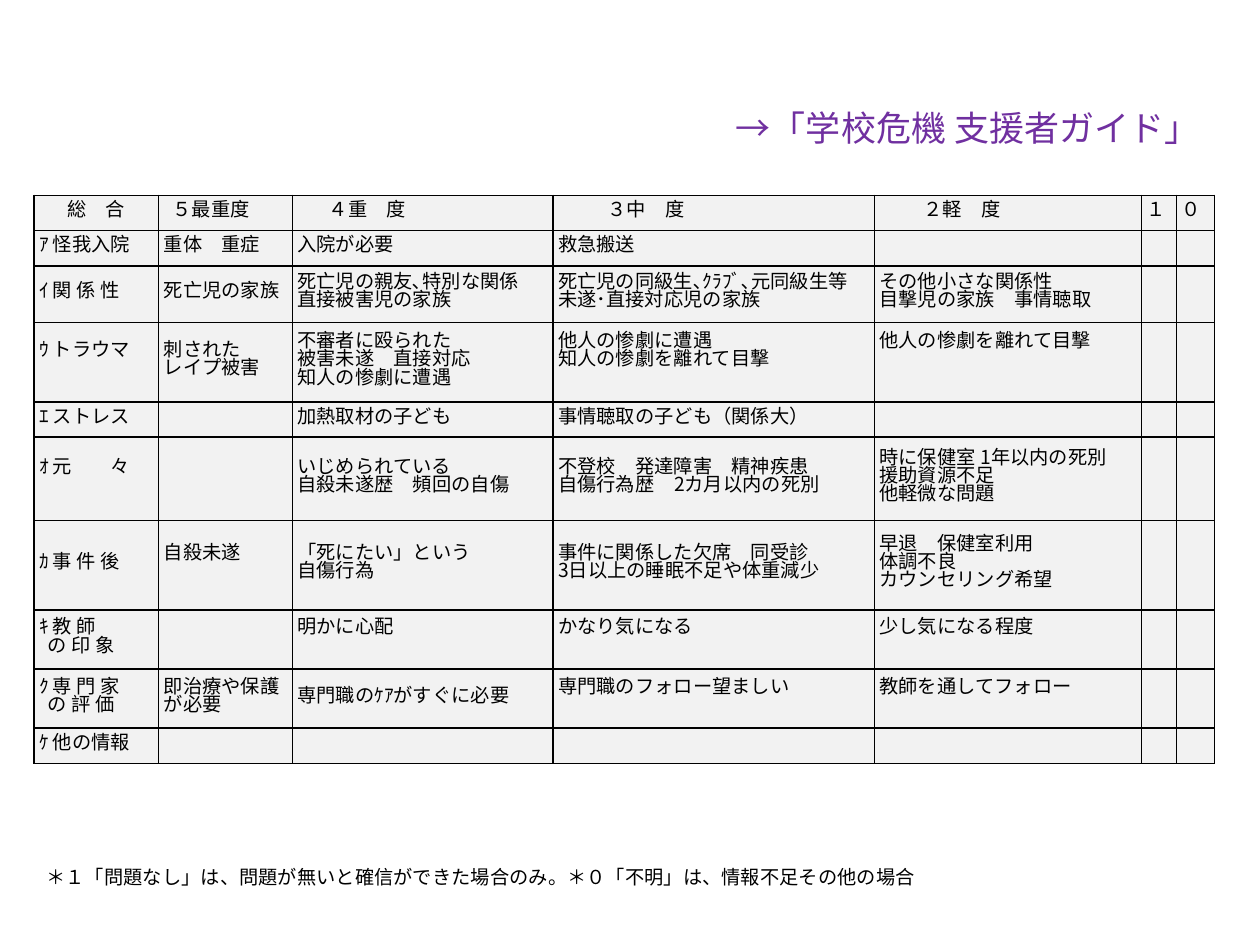
from dataclasses import dataclass

from lxml import etree
from pptx import Presentation
from pptx.dml.color import RGBColor
from pptx.enum.text import MSO_ANCHOR, MSO_AUTO_SIZE, PP_ALIGN
from pptx.oxml.ns import qn
from pptx.util import Inches, Pt

LEFT, CENTER, RIGHT = PP_ALIGN.LEFT, PP_ALIGN.CENTER, PP_ALIGN.RIGHT
MIDDLE = MSO_ANCHOR.MIDDLE
FIT_SHAPE = MSO_AUTO_SIZE.SHAPE_TO_FIT_TEXT

BLACK = RGBColor(0x00, 0x00, 0x00)
PURPLE = RGBColor(0x70, 0x30, 0xA0)
LIGHT_GREY = RGBColor(0xF2, 0xF2, 0xF2)

FONT = "Noto Sans CJK JP"
BODY_SIZE = 11
LINE_HEIGHT = 10.4
CONTINUATION_INDENT = 0.07
COLUMN_WIDTHS = (0.99, 1.06, 2.07, 2.55, 2.12, 0.28, 0.3)
ROW_HEIGHTS = (0.28, 0.28, 0.45, 0.63, 0.28, 0.66, 0.71, 0.47, 0.47, 0.28)


@dataclass(frozen=True)
class Entry:
    text: str = ""
    lines_below: int = 0  # free lines kept under the text
    indent: float = 0
    align: PP_ALIGN = LEFT


@dataclass(frozen=True)
class Caption:
    text: str
    left: float
    top: float
    width: float
    height: float
    size: int
    color: RGBColor
    align: PP_ALIGN


# Criteria by severity; columns left out at the end of a row are empty
ROWS = (
    (Entry("総　合", align=CENTER), Entry("５最重度", indent=0.07),
     Entry("４重　度", indent=0.25), Entry("３中　度", indent=0.39),
     Entry("２軽　度", indent=0.35), Entry("１"), Entry("０")),
    (Entry("ｱ 怪我入院"), Entry("重体　重症"), Entry("入院が必要"), Entry("救急搬送")),
    (Entry("ｲ 関 係 性"), Entry("死亡児の家族"),
     Entry("死亡児の親友､特別な関係\n直接被害児の家族"),
     Entry("死亡児の同級生､ｸﾗﾌﾞ､元同級生等\n未遂･直接対応児の家族"),
     Entry("その他小さな関係性\n目撃児の家族　事情聴取")),
    (Entry("ｳ トラウマ", 1), Entry("刺された\nレイプ被害"),
     Entry("不審者に殴られた\n被害未遂　直接対応\n知人の惨劇に遭遇"),
     Entry("他人の惨劇に遭遇\n知人の惨劇を離れて目撃", 1),
     Entry("他人の惨劇を離れて目撃", 2)),
    (Entry("ｴ ストレス"), Entry(), Entry("加熱取材の子ども"),
     Entry("事情聴取の子ども（関係大）")),
    (Entry("ｵ 元　　々", 1), Entry(),
     Entry("いじめられている\n自殺未遂歴　頻回の自傷"),
     Entry("不登校　発達障害　精神疾患\n自傷行為歴　2カ月以内の死別"),
     Entry("時に保健室 1年以内の死別\n援助資源不足\n他軽微な問題")),
    (Entry("ｶ 事 件 後"), Entry("自殺未遂", 1),
     Entry("「死にたい」という\n自傷行為"),
     Entry("事件に関係した欠席　同受診\n3日以上の睡眠不足や体重減少"),
     Entry("早退　保健室利用\n体調不良\nカウンセリング希望")),
    (Entry("ｷ 教 師\nの 印 象"), Entry(), Entry("明かに心配", 1),
     Entry("かなり気になる", 1), Entry("少し気になる程度", 1)),
    (Entry("ｸ 専 門 家\nの 評 価"), Entry("即治療や保護が必要"),
     Entry("専門職のｹｱがすぐに必要"), Entry("専門職のフォロー望ましい", 1),
     Entry("教師を通してフォロー", 1)),
    (Entry("ｹ 他の情報"),),
)

CAPTIONS = (
    Caption("＊１「問題なし」は、問題が無いと確信ができた場合のみ。＊０「不明」は、情報不足その他の場合",
            0.27, 6.82, 9.45, 0.29, BODY_SIZE, BLACK, LEFT),
    Caption("→「学校危機 支援者ガイド」", 3.66, 0.8, 5.96, 0.44, 20, PURPLE, RIGHT),
)


def add_span(para, text: str, size: int, color: RGBColor) -> None:
    span = para.add_run()
    span.text = text
    for name, value in {"name": FONT, "size": Pt(size), "bold": False}.items():
        setattr(span.font, name, value)
    span.font.color.rgb = color
    east_asian = etree.SubElement(span.font._element, qn("a:ea"))
    east_asian.set("typeface", FONT)


def add_borders(cell) -> None:
    properties = cell._tc.get_or_add_tcPr()
    for position, side in enumerate(("lnL", "lnR", "lnT", "lnB")):
        line = etree.Element(qn(f"a:{side}"), w=str(Pt(1)))
        fill = etree.SubElement(line, qn("a:solidFill"))
        etree.SubElement(fill, qn("a:srgbClr"), val=str(BLACK))
        properties.insert(position, line)


def fill_cell(cell, entry: Entry, is_label: bool) -> None:
    formats = {
        "margin_left": Inches(0.04),
        "margin_right": Inches(0.04),
        "margin_top": 0,
        "margin_bottom": Pt(LINE_HEIGHT * entry.lines_below),
        "vertical_anchor": MIDDLE,
    }
    for name, value in formats.items():
        setattr(cell, name, value)
    cell.fill.solid()
    cell.fill.fore_color.rgb = LIGHT_GREY
    add_borders(cell)

    frame = cell.text_frame
    for number, text in enumerate(entry.text.split("\n")):
        para = frame.add_paragraph() if number else frame.paragraphs[0]
        para.alignment = entry.align
        para.line_spacing = Pt(LINE_HEIGHT)
        indent = CONTINUATION_INDENT if is_label and number else entry.indent
        if indent:
            para._p.get_or_add_pPr().set("marL", str(Inches(indent)))
        if text:
            add_span(para, text, BODY_SIZE, BLACK)
        else:
            para.font.size = Pt(BODY_SIZE)
            etree.SubElement(para._p, qn("a:endParaRPr"), sz=str(BODY_SIZE * 100))


def add_severity_table(page) -> None:
    table = page.shapes.add_table(
        len(ROW_HEIGHTS), len(COLUMN_WIDTHS), Inches(0.27), Inches(1.55),
        Inches(sum(COLUMN_WIDTHS)), Inches(sum(ROW_HEIGHTS))).table
    table.first_row = False
    table.horz_banding = False
    for column, width in zip(table.columns, COLUMN_WIDTHS):
        column.width = Inches(width)
    for row, height, entries in zip(table.rows, ROW_HEIGHTS, ROWS):
        row.height = Inches(height)
        for index, cell in enumerate(row.cells):
            entry = entries[index] if index < len(entries) else Entry()
            fill_cell(cell, entry, is_label=index == 0)


def add_caption(page, caption: Caption) -> None:
    box = page.shapes.add_textbox(Inches(caption.left), Inches(caption.top),
                                  Inches(caption.width), Inches(caption.height))
    frame = box.text_frame
    frame.word_wrap = True
    frame.auto_size = FIT_SHAPE
    para = frame.paragraphs[0]
    para.alignment = caption.align
    add_span(para, caption.text, caption.size, caption.color)


def main() -> None:
    deck = Presentation()
    deck.slide_width, deck.slide_height = Inches(10), Inches(7.5)
    page = deck.slides.add_slide(deck.slide_layouts[6])

    add_severity_table(page)
    for caption in CAPTIONS:
        add_caption(page, caption)

    deck.save("out.pptx")


if __name__ == "__main__":
    main()
